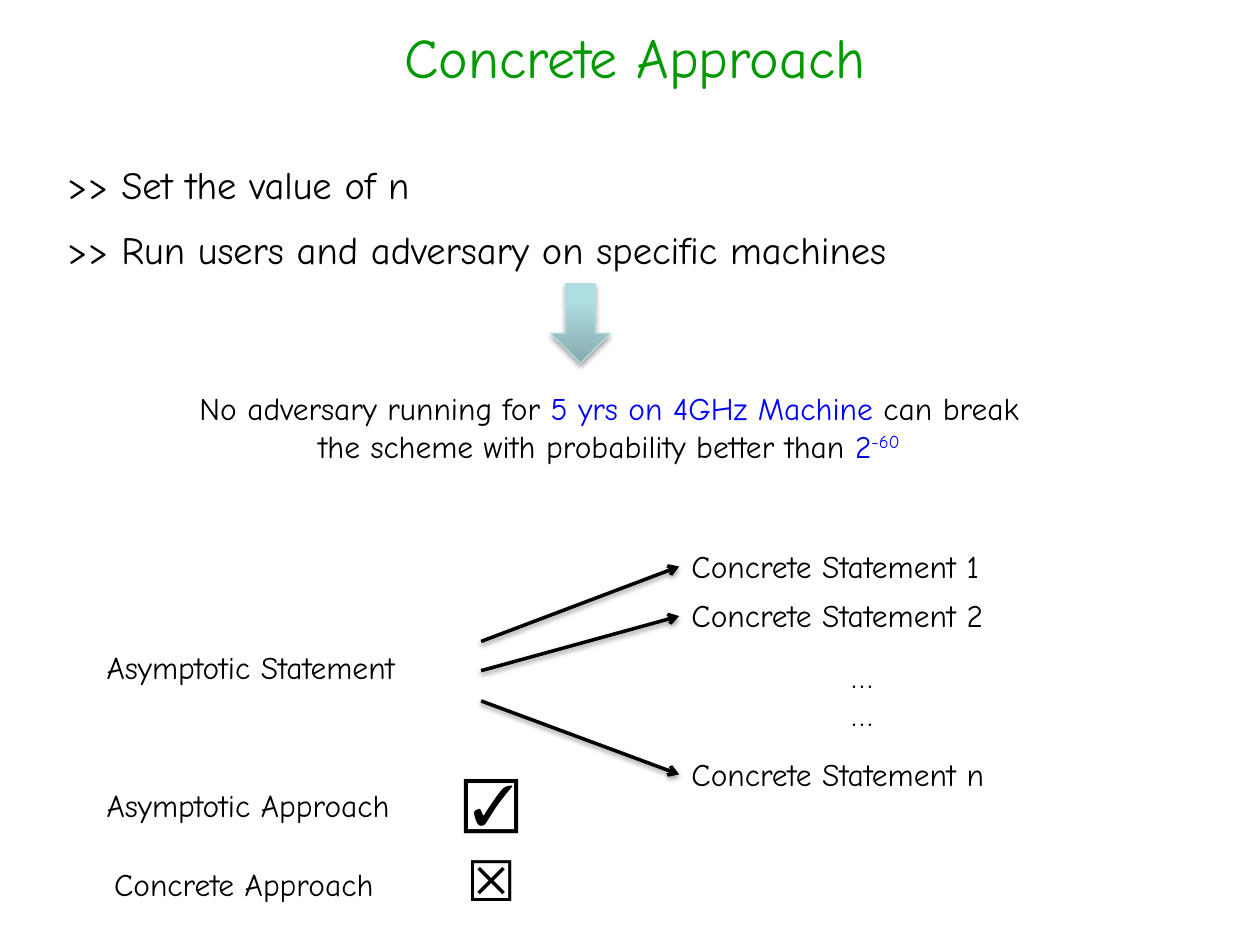
from collections import namedtuple
from dataclasses import dataclass

from lxml import etree
from pptx import Presentation
from pptx import util as u
from pptx.dml.color import RGBColor
from pptx.enum import shapes, text
from pptx.oxml import ns

Box = namedtuple("Box", "x y w h")


@dataclass(frozen=True)
class Theme:
    """Fonts, type sizes and colours of the slide."""
    font: str = "Comic Neue"
    symbol_font: str = "Arial"
    title: int = 32
    step: int = 22
    body: int = 18
    symbol: int = 32
    green: str = "009900"
    blue: str = "0000FF"
    black: str = "000000"
    arrow_line: str = "B6DCDF"
    arrow_stops: tuple = ((0, "87ABAE"), (80, "AFDEE2"), (100, "AFE0E4"))


T = Theme()


def rgb(value):
    """Turn a hex string into a colour."""
    return RGBColor.from_string(value)


def place(s, box):
    """Move and size a shape, in centimetres."""
    s.left, s.top, s.width, s.height = (u.Cm(v) for v in box)


def style(p, size, color=T.black, font=T.font, align=text.PP_ALIGN.LEFT):
    """Format a whole paragraph."""
    p.font.size, p.font.name = u.Pt(size), font
    p.font.color.rgb = rgb(color)
    p.alignment = align


def add_text(slide, box, content, size=T.body, wrap=False, **fmt):
    """Add a text box with one paragraph for each line of content."""
    s = slide.shapes.add_textbox(*(u.Cm(v) for v in box))
    tf = s.text_frame
    tf.word_wrap = wrap
    tf.text = content
    for p in tf.paragraphs:
        style(p, size, **fmt)
    return tf


def add_shadow(s, blur, dist, alpha):
    """Give a shape a soft shadow that falls straight down."""
    pr = s._element.spPr
    for old in pr.findall(ns.qn("a:effectLst")):
        pr.remove(old)
    effects = etree.SubElement(pr, ns.qn("a:effectLst"))
    shadow = etree.SubElement(effects, ns.qn("a:outerShdw"), blurRad=str(u.Pt(blur)),
                              dist=str(u.Pt(dist)), dir="5400000", rotWithShape="0")
    color = etree.SubElement(shadow, ns.qn("a:srgbClr"), val=T.black)
    etree.SubElement(color, ns.qn("a:alpha"), val=str(alpha * 1000))


def fill_gradient(s, stops):
    """Fill a shape with a gradient that runs from bottom to top."""
    pr = s._element.spPr
    grad = etree.Element(ns.qn("a:gradFill"), rotWithShape="1")
    stop_list = etree.SubElement(grad, ns.qn("a:gsLst"))
    for pos, value in stops:
        stop = etree.SubElement(stop_list, ns.qn("a:gs"), pos=str(pos * 1000))
        etree.SubElement(stop, ns.qn("a:srgbClr"), val=value)
    etree.SubElement(grad, ns.qn("a:lin"), ang="16200000", scaled="0")
    pr.find(ns.qn("a:prstGeom")).addnext(grad)


def add_title(slide, box):
    """Move and format the title placeholder."""
    s = slide.shapes.title
    place(s, box)
    tf = s.text_frame
    tf.text = "Concrete Approach"
    tf.auto_size = text.MSO_AUTO_SIZE.NONE
    tf.vertical_anchor = text.MSO_ANCHOR.TOP
    style(tf.paragraphs[0], T.title, T.green, align=text.PP_ALIGN.CENTER)


def add_steps(slide, box):
    """Add the two steps and the block arrow below them."""
    tf = add_text(slide, box, ">> Set the value of n\n"
                  ">> Run users and adversary on specific machines", T.step, wrap=True)
    for p in tf.paragraphs:
        p.space_after = u.Pt(T.step / 2)
    s = slide.shapes.add_shape(shapes.MSO_SHAPE.DOWN_ARROW, 0, 0, 0, 0)
    place(s, Box(box.x + 10, box.y + box.h, 1.2, 1.6))
    fill_gradient(s, T.arrow_stops)
    s.line.color.rgb, s.line.width = rgb(T.arrow_line), u.Pt(0.75)
    add_shadow(s, 3.1, 1.8, 35)


def add_claim(slide, box):
    """Add the security claim with its figures in blue."""
    tf = add_text(slide, box, "", wrap=True, align=text.PP_ALIGN.CENTER)
    p = tf.paragraphs[0]
    parts = (("No adversary running for ", T.black),
             ("5 yrs on 4GHz Machine ", T.blue),
             ("can break the scheme with probability better than ", T.black),
             ("2", T.blue), ("-60", T.blue))
    for content, color in parts:
        r = p.add_run()
        r.text = content
        r.font.color.rgb = rgb(color)
    r.font._element.set("baseline", "30000")


def add_statements(slide, box):
    """Add the asymptotic statement with arrows to its concrete ones."""
    add_text(slide, Box(box.x, box.y + 2.03, 7.3, 1), "Asymptotic Statement")
    right = box.x + 11.79
    rows = (("1", 0, 2.03), ("2", 1, 2.62), ("n", 4.19, 3.23))
    for name, top, _ in rows:
        add_text(slide, Box(right, box.y + top, 7.15, 1), f"Concrete Statement {name}")
    add_text(slide, Box(right + 3.23, box.y + 2.23, 0.58, 1.8), "……", wrap=True)
    for _, top, start in rows:
        s = slide.shapes.add_connector(
            shapes.MSO_CONNECTOR.STRAIGHT, u.Cm(box.x + 7.8), u.Cm(box.y + start),
            u.Cm(right), u.Cm(box.y + top + 0.52))
        s.line.color.rgb, s.line.width = rgb(T.black), u.Pt(2)
        ln = s._element.spPr.find(ns.qn("a:ln"))
        etree.SubElement(ln, ns.qn("a:tailEnd"), type="arrow")
        add_shadow(s, 3.1, 1.6, 38)


def add_verdicts(slide, box):
    """Add both approaches, each with its check box."""
    rows = (("Asymptotic Approach", "☑", 0), ("Concrete Approach", "☒", 0.15))
    for i, (name, mark, indent) in enumerate(rows):
        y = box.y + i * box.h / 2
        add_text(slide, Box(box.x + indent, y + 0.4, 6.9, 1), name)
        add_text(slide, Box(box.x + 7.19 + indent / 2, y, 1.52, 1.62), mark,
                 T.symbol, font=T.symbol_font)


def main():
    """Build the slide and save it."""
    prs = Presentation()
    prs.slide_width, prs.slide_height = u.Cm(25.4), u.Cm(19.05)
    slide = prs.slides.add_slide(prs.slide_layouts[5])
    add_title(slide, Box(0.7, 0.33, 24.2, 1.4))
    add_steps(slide, Box(1.1, 3.12, 21, 2.6))
    add_claim(slide, Box(3.3, 7.72, 17.96, 1.8))
    add_statements(slide, Box(1.9, 10.9, 19, 5.2))
    add_verdicts(slide, Box(1.9, 15.32, 8.7, 3.2))
    prs.save("out.pptx")


if __name__ == "__main__":
    main()
